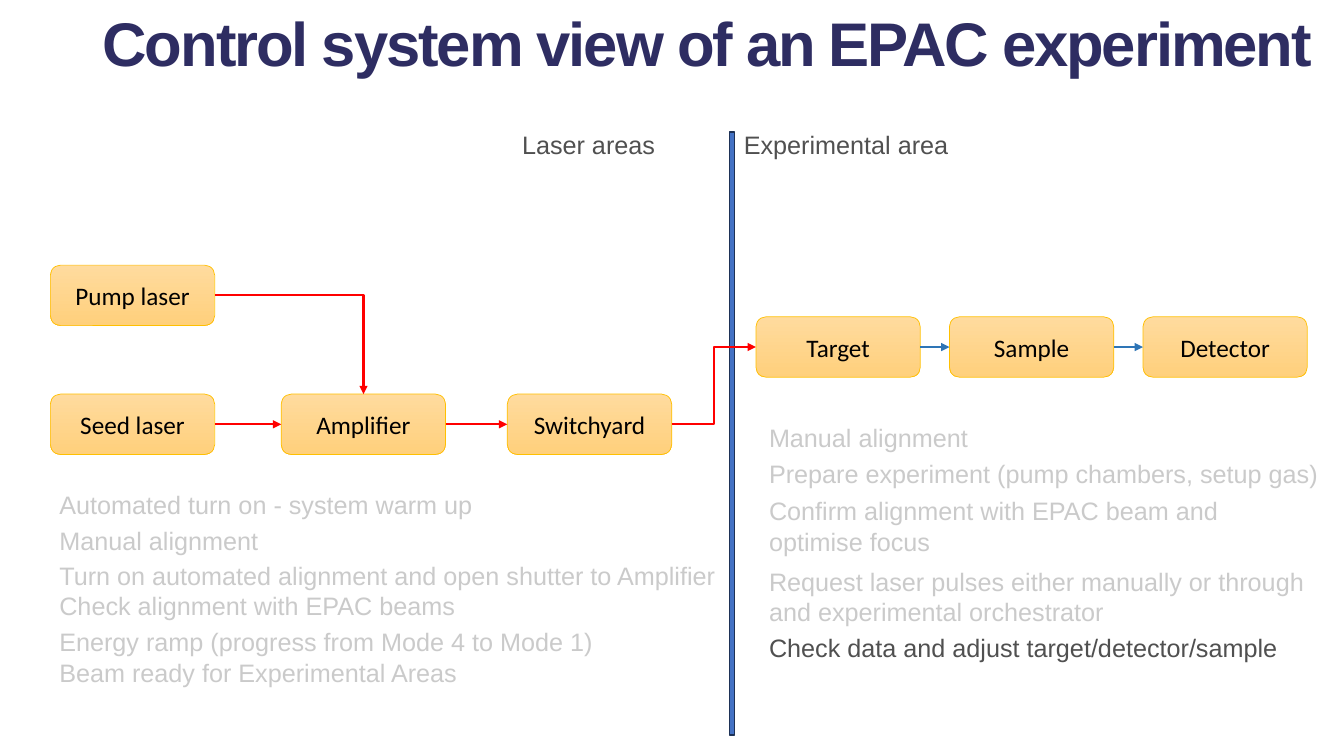
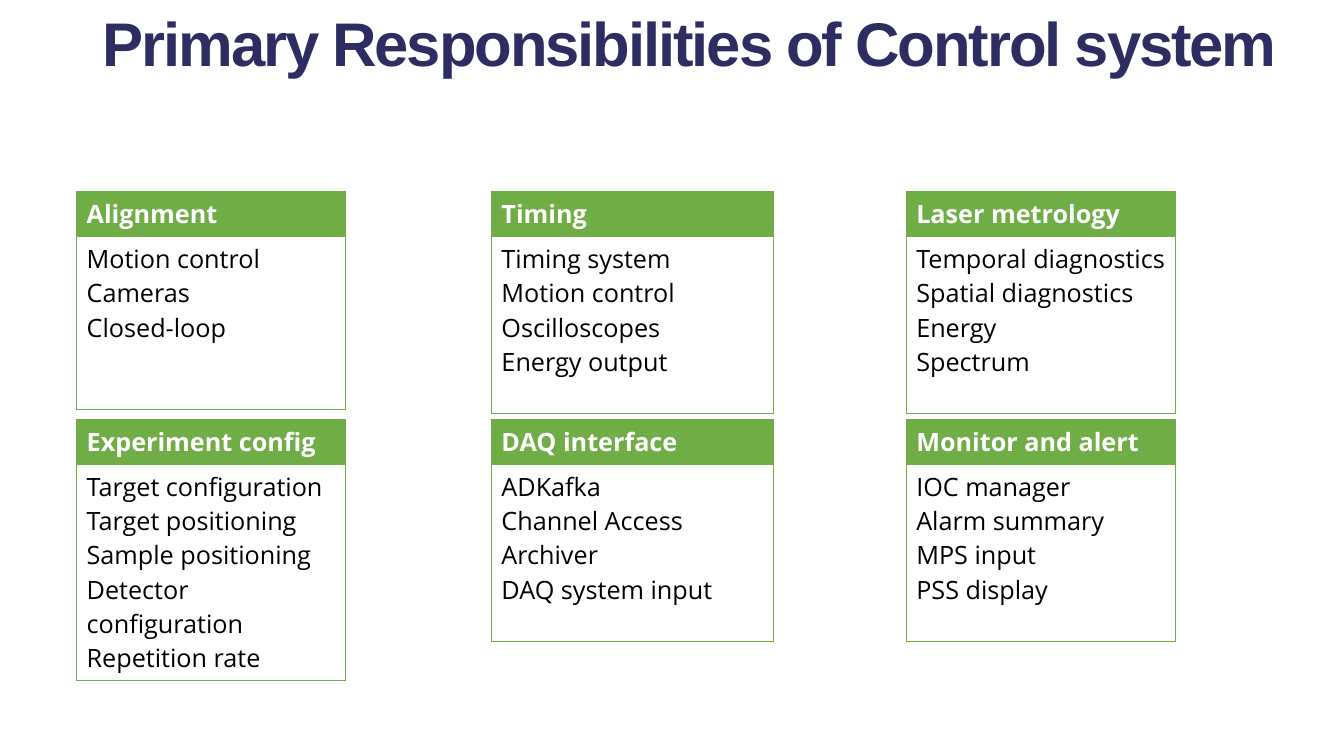
from dataclasses import dataclass

from lxml import etree
from pptx import Presentation
from pptx.dml.color import RGBColor
from pptx.enum.shapes import MSO_CONNECTOR, MSO_SHAPE
from pptx.enum.text import MSO_ANCHOR, MSO_AUTO_SIZE, PP_ALIGN
from pptx.oxml.ns import qn
from pptx.util import Pt

RECT, ROUND = MSO_SHAPE.RECTANGLE, MSO_SHAPE.ROUNDED_RECTANGLE
STRAIGHT, ELBOW = MSO_CONNECTOR.STRAIGHT, MSO_CONNECTOR.ELBOW
MIDDLE, CENTER = MSO_ANCHOR.MIDDLE, PP_ALIGN.CENTER
FIT_SHAPE = MSO_AUTO_SIZE.SHAPE_TO_FIT_TEXT
TOP, LEFT, RIGHT = 0, 1, 3

# Shared colours and text formats
NAVY, GREY, BLACK, WHITE = "2E2D62", "505050", "000000", "FFFFFF"
GREEN, RED, BLUE, AMBER = "70AD47", "FF0000", "2E75B6", "FFC000"
TITLE = {"name": "Arial", "size": Pt(44), "bold": True}
BODY = {"name": "Arial", "size": Pt(18)}
BOX = {"name": "Calibri", "size": Pt(18)}
HEAD = {"name": "Open Sans", "size": Pt(18), "bold": True}
CELL = {"name": "Open Sans", "size": Pt(18), "bold": False}

BOX_W, BOX_H = 117.4, 43.2


@dataclass
class Step:
    name: str
    x: float
    y: float


@dataclass
class Link:
    start: str
    end: str
    color: str = RED
    end_site: int = LEFT
    preset: str = "line"


@dataclass
class Note:
    lines: list[str]
    x: float
    y: float
    w: float


@dataclass
class Card:
    title: str
    items: list[str]
    col: int
    row: int
    body_h: float = 126.4


LASER_X, EXP_X = 35.3, 542.2
SEED_Y, TARGET_Y = 281.5, 226.3
STEPS = [
    Step("Pump laser", 36, 189.4),
    Step("Seed laser", 36, SEED_Y),
    Step("Amplifier", 200.9, SEED_Y),
    Step("Switchyard", 362.4, SEED_Y),
] + [Step(name, 540 + 138.2 * i, TARGET_Y)
     for i, name in enumerate(["Target", "Sample", "Detector"])]
LINKS = [
    Link("Seed laser", "Amplifier"),
    Link("Pump laser", "Amplifier", end_site=TOP, preset="bentConnector2"),
    Link("Switchyard", "Target", preset="bentConnector3"),
    Link("Amplifier", "Switchyard"),
    Link("Target", "Sample", BLUE),
    Link("Sample", "Detector", BLUE),
]
AREAS = [
    Note(["Laser areas"], 365.8, 88.6, 160),
    Note(["Experimental area"], 524.2, 88.6, 314),
]
DONE_NOTES = [
    Note(["Automated turn on - system warm up"], LASER_X, 346.3, 314),
    Note(["Manual alignment"], LASER_X, 371.5, 314),
    Note(["Turn on automated alignment and open shutter to Amplifier",
          "Check alignment with EPAC beams"], LASER_X, 396.7, 495.4),
    Note(["Energy ramp (progress from Mode 4 to Mode 1)",
          "Beam ready for Experimental Areas"], LASER_X, 444.2, 410.4),
    Note(["Manual alignment"], EXP_X, 298.1, 314),
    Note(["Prepare experiment (pump chambers, setup gas)"], EXP_X, 324, 425.5),
    Note(["Confirm alignment with EPAC beam and optimise focus"],
         EXP_X, 350.6, 402.5),
    Note(["Request laser pulses either manually or through and experimental "
          "orchestrator"], EXP_X, 401, 425.5),
]
CURRENT_NOTE = Note(["Check data and adjust target/detector/sample"],
                    EXP_X, 447.8, 425.5)
VEILS = [(37.4, 349.2, 478.1, 145.4), (544.3, 295.2, 401, 156.2)]

CARDS = [
    Card("Alignment", ["Motion control", "Cameras", "Closed-loop"], 0, 0, 123.6),
    Card("Timing", ["Timing system", "Motion control", "Oscilloscopes",
                    "Energy output"], 1, 0),
    Card("Laser metrology", ["Temporal diagnostics", "Spatial diagnostics",
                             "Energy", "Spectrum"], 2, 0),
    Card("Experiment config", ["Target configuration", "Target positioning",
                               "Sample positioning", "Detector configuration",
                               "Repetition rate"], 0, 1, 154.3),
    Card("DAQ interface", ["ADKafka", "Channel Access", "Archiver",
                           "DAQ system input"], 1, 1),
    Card("Monitor and alert", ["IOC manager", "Alarm summary", "MPS input",
                               "PSS display"], 2, 1),
]
CARD_W = [192.2, 201.6, 192.2]
CARD_Y = [136.8, 299.5]
HEAD_H = 32.2


def rgb(color: str) -> RGBColor:
    return RGBColor.from_string(color)


def write(tf, lines: list[str], fmt: dict, color: str, align=None) -> None:
    for i, line in enumerate(lines):
        p = tf.paragraphs[0] if i == 0 else tf.add_paragraph()
        p.alignment = align
        r = p.add_run()
        r.text = line
        for key, value in fmt.items():
            setattr(r.font, key, value)
        r.font.color.rgb = rgb(color)


def add_text(s, note: Note, fmt: dict = BODY, color: str = GREY):
    sp = s.shapes.add_textbox(Pt(note.x), Pt(note.y), Pt(note.w), Pt(28.8))
    tf = sp.text_frame
    tf.word_wrap = True
    tf.auto_size = FIT_SHAPE
    write(tf, note.lines, fmt, color)
    return sp


def add_title(s, text: str) -> None:
    sp = add_text(s, Note([text], 66.2, 0, 882.7), TITLE, NAVY)
    sp.height = Pt(60.5)
    for r in sp.text_frame.paragraphs[0].runs:
        r.font._element.set("spc", "-150")


def add_panel(s, x: float, y: float, w: float, h: float, kind=RECT):
    sp = s.shapes.add_shape(kind, Pt(x), Pt(y), Pt(w), Pt(h))
    sp.shadow.inherit = False
    return sp


def add_step(s, step: Step):
    sp = add_panel(s, step.x, step.y, BOX_W, BOX_H, ROUND)
    sp.fill.gradient()
    sp.fill.gradient_angle = 270
    for stop, color in zip(sp.fill.gradient_stops, ["FFDB9E", "FFD07C"]):
        stop.color.rgb = rgb(color)
    sp.line.color.rgb = rgb(AMBER)
    sp.line.width = Pt(0.5)
    sp.text_frame.vertical_anchor = MIDDLE
    write(sp.text_frame, [step.name], BOX, BLACK, CENTER)
    return sp


def add_link(s, link: Link, boxes: dict) -> None:
    kind = STRAIGHT if link.preset == "line" else ELBOW
    cx = s.shapes.add_connector(kind, 0, 0, 0, 0)
    cx.begin_connect(boxes[link.start], RIGHT)
    cx.end_connect(boxes[link.end], link.end_site)
    cx.line.color.rgb = rgb(link.color)
    cx.line.width = Pt(1.5)
    sppr = cx.element.spPr
    sppr.find(qn("a:prstGeom")).set("prst", link.preset)
    etree.SubElement(sppr.find(qn("a:ln")), qn("a:tailEnd"), type="triangle")
    etree.SubElement(sppr, qn("a:effectLst"))


def add_veil(s, x: float, y: float, w: float, h: float) -> None:
    sp = add_panel(s, x, y, w, h)
    sp.fill.solid()
    sp.fill.fore_color.rgb = rgb(WHITE)
    color = sp.element.spPr.find(qn("a:solidFill")).find(qn("a:srgbClr"))
    etree.SubElement(color, qn("a:alpha"), val="70000")
    sp.line.fill.background()


def set_borders(cell, color: str) -> None:
    tcpr = cell._tc.get_or_add_tcPr()
    for side in ("a:lnL", "a:lnR", "a:lnT", "a:lnB"):
        ln = etree.SubElement(tcpr, qn(side), w=str(Pt(0.5)))
        fill = etree.SubElement(ln, qn("a:solidFill"))
        etree.SubElement(fill, qn("a:srgbClr"), val=color)


def add_card(s, card: Card) -> None:
    w = CARD_W[card.col]
    frame = s.shapes.add_table(2, 1, Pt(54.7 + 296.3 * card.col),
                               Pt(CARD_Y[card.row]), Pt(w),
                               Pt(HEAD_H + card.body_h))
    table = frame.table
    table.horz_banding = False
    table.rows[0].height = Pt(HEAD_H)
    table.rows[1].height = Pt(card.body_h)
    head, body = table.cell(0, 0), table.cell(1, 0)
    for cell in (head, body):
        set_borders(cell, GREEN)
    head.fill.solid()
    head.fill.fore_color.rgb = rgb(GREEN)
    body.fill.background()
    write(head.text_frame, [card.title], HEAD, WHITE)
    write(body.text_frame, card.items, CELL, BLACK)


def build_experiment(s) -> None:
    # Process boxes
    boxes = {step.name: add_step(s, step) for step in STEPS}

    # Wall between the two areas
    wall = add_panel(s, 521.3, 94.3, 3.6, 430.6)
    wall.fill.solid()
    wall.fill.fore_color.rgb = rgb("4472C4")
    wall.line.color.rgb = rgb("1E3256")
    wall.line.width = Pt(1)

    # Notes, with the finished ones faded
    for note in AREAS + DONE_NOTES:
        add_text(s, note)
    for veil in VEILS:
        add_veil(s, *veil)
    add_text(s, CURRENT_NOTE)

    # Beam path
    for link in LINKS:
        add_link(s, link, boxes)
    add_title(s, "Control system view of an EPAC experiment")


def build_responsibilities(s) -> None:
    for card in CARDS:
        add_card(s, card)
    add_title(s, "Primary Responsibilities of Control system")


def main() -> None:
    prs = Presentation()
    prs.slide_width, prs.slide_height = Pt(960), Pt(540)
    for build in (build_experiment, build_responsibilities):
        build(prs.slides.add_slide(prs.slide_layouts[6]))
    prs.save("out.pptx")


if __name__ == "__main__":
    main()
